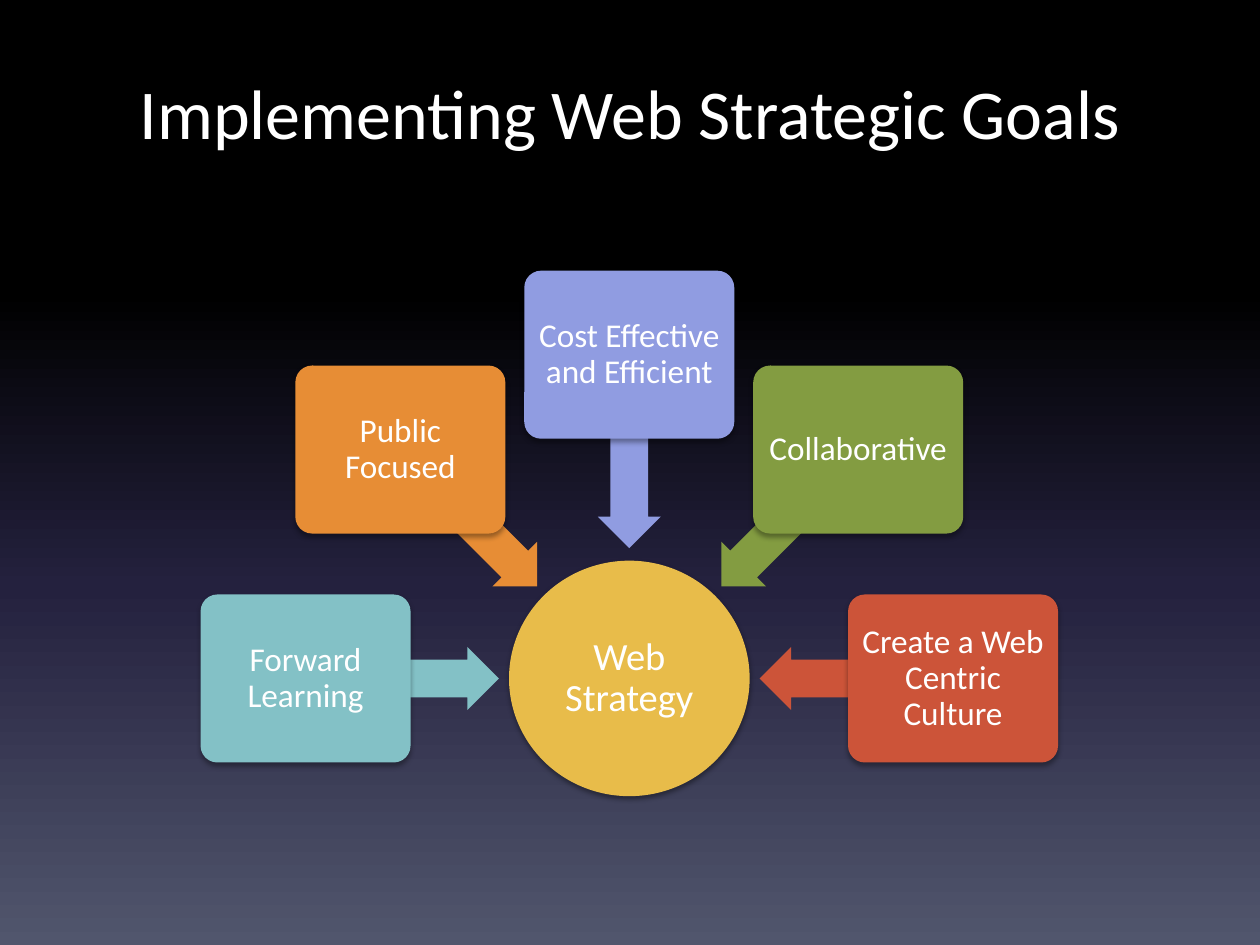
from math import cos, radians, sin

from pptx import Presentation
from pptx.dml.color import RGBColor
from pptx.enum.shapes import MSO_SHAPE
from pptx.enum.text import MSO_ANCHOR, PP_ALIGN
from pptx.oxml import parse_xml
from pptx.oxml.ns import nsdecls, qn
from pptx.util import Pt

# Content
TITLE = "Implementing Web Strategic Goals"
HUB = ("Web Strategy", "E8BC4A")
GOALS = [  # clockwise, from left to right
    ("Forward Learning", "83C1C6"),
    ("Public Focused", "E78D35"),
    ("Cost Effective and Efficient", "909CE1"),
    ("Collaborative", "839C41"),
    ("Create a Web Centric Culture", "CC5439"),
]
BACKGROUND = [(0, "000000"), (31, "000000"), (62, "24213E"), (100, "51566D")]

# Layout, in points
CENTER_X, CENTER_Y = 359.6, 387.7
HUB_SIZE = (137.5, 134.6)
BOX_SIZE = (120, 96)
ARROW_SIZE = (111, 36)
BOX_RADIUS, ARROW_RADIUS = 185, 130


def color(value):
    return RGBColor.from_string(value)


def add_block(shape_type, x, y, size, fill):
    """Add a flat shape centred on x, y."""
    w, h = size
    sp = s.shapes.add_shape(shape_type, Pt(x - w / 2), Pt(y - h / 2), Pt(w), Pt(h))
    sp.fill.solid()
    sp.fill.fore_color.rgb = color(fill)
    sp.line.fill.background()
    sp.shadow.inherit = False
    return sp


def add_shadow(sp, alpha, distance):
    effects = sp._element.spPr.find(qn("a:effectLst"))
    effects.append(parse_xml(
        f'<a:outerShdw {nsdecls("a")} blurRad="{Pt(3.1)}" dist="{Pt(distance)}" '
        f'dir="5400000" rotWithShape="0"><a:srgbClr val="000000">'
        f'<a:alpha val="{alpha * 1000}"/></a:srgbClr></a:outerShdw>'))


def set_text(sp, text, size, inset, anchor=MSO_ANCHOR.MIDDLE, spacing=0.9):
    tf = sp.text_frame
    tf.text = text
    tf.word_wrap = True
    tf.vertical_anchor = anchor
    tf.margin_left = tf.margin_right = tf.margin_top = tf.margin_bottom = Pt(inset)
    p = tf.paragraphs[0]
    p.alignment = PP_ALIGN.CENTER
    p.line_spacing = spacing
    font = p.runs[0].font
    font.name, font.size = "Calibri", Pt(size)
    font.color.rgb = color("FFFFFF")


prs = Presentation()
prs.slide_width, prs.slide_height = Pt(720), Pt(540)
s = prs.slides.add_slide(prs.slide_layouts[6])

# Background gradient, top to bottom
fill = s.background.fill
fill.gradient()
fill.gradient_angle = 270
stops = s._element.find(".//" + qn("a:gsLst"))
stops.clear()
for position, value in BACKGROUND:
    stops.append(parse_xml(f'<a:gs {nsdecls("a")} pos="{position * 1000}">'
                           f'<a:srgbClr val="{value}"/></a:gs>'))

# Title
title = s.shapes.add_textbox(Pt(36), Pt(36), Pt(648), Pt(90))
set_text(title, TITLE, 40, 3.6, MSO_ANCHOR.TOP, 1)

# Hub
hub = add_block(MSO_SHAPE.OVAL, CENTER_X, CENTER_Y, HUB_SIZE, HUB[1])
add_shadow(hub, 38, 1.6)
set_text(hub, HUB[0], 22, 1.7)

# Goals on a half circle, each with an arrow to the hub
for i, (text, fill_color) in enumerate(GOALS):
    angle = 180 + i * 180 / (len(GOALS) - 1)
    dx, dy = cos(radians(angle)), sin(radians(angle))

    arrow = add_block(MSO_SHAPE.LEFT_ARROW, CENTER_X + ARROW_RADIUS * dx,
                      CENTER_Y + ARROW_RADIUS * dy, ARROW_SIZE, fill_color)
    arrow.adjustments[0], arrow.adjustments[1] = 0.6, 0.5
    arrow.rotation = angle % 360

    box = add_block(MSO_SHAPE.ROUNDED_RECTANGLE, CENTER_X + BOX_RADIUS * dx,
                    CENTER_Y + BOX_RADIUS * dy, BOX_SIZE, fill_color)
    box.adjustments[0] = 0.1
    add_shadow(box, 35, 1.8)
    set_text(box, text, 19, 2.7)

prs.save("out.pptx")
